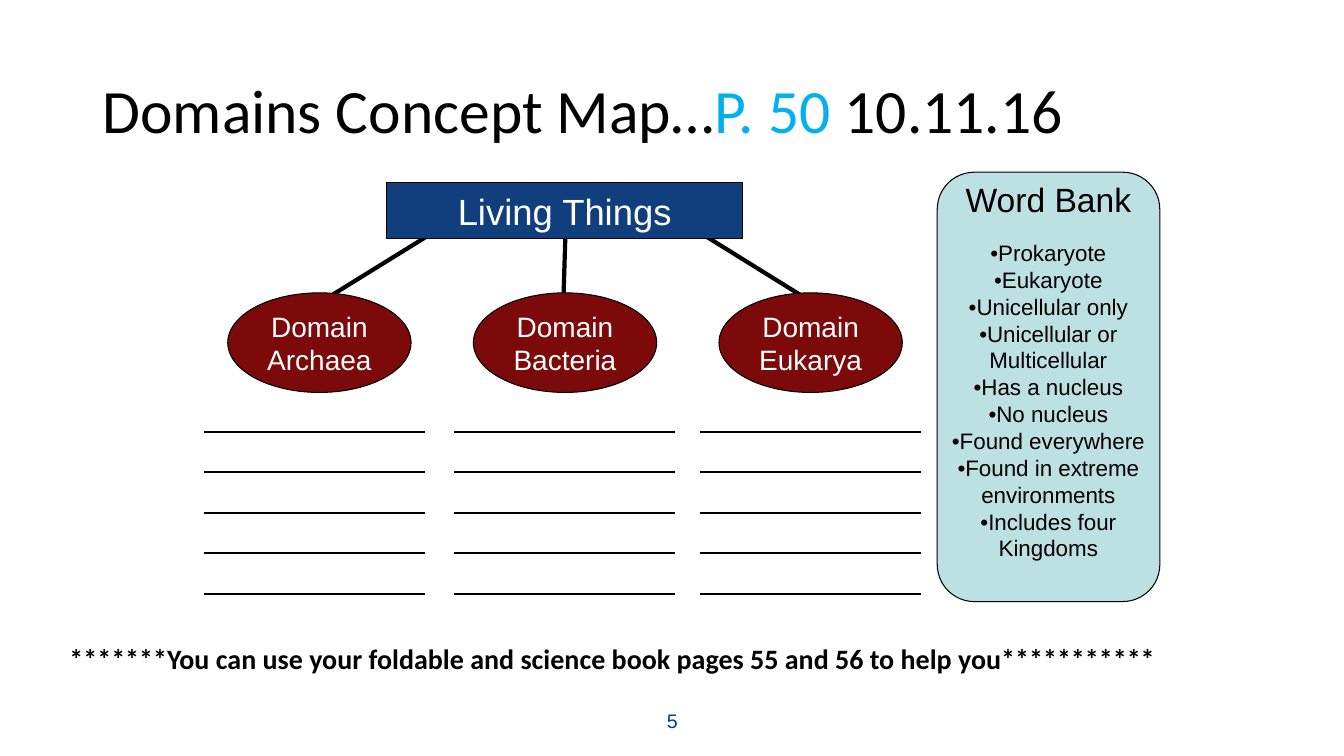
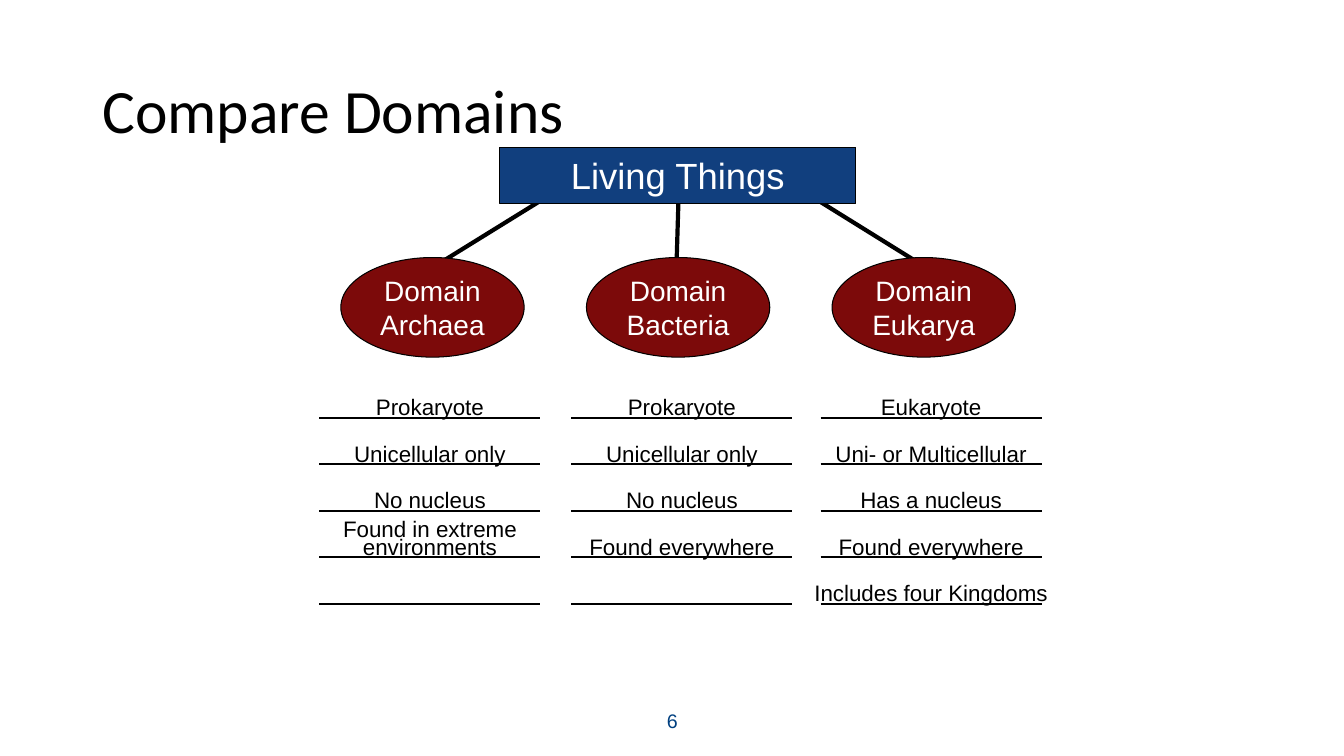
from lxml import etree
from pptx import Presentation
from pptx.dml.color import RGBColor
from pptx.enum.shapes import MSO_CONNECTOR, MSO_SHAPE
from pptx.enum.text import MSO_ANCHOR, PP_ALIGN
from pptx.oxml.ns import qn
from pptx.util import Cm, Pt

STRAIGHT = MSO_CONNECTOR.STRAIGHT
RECTANGLE, OVAL, ROUNDED = MSO_SHAPE.RECTANGLE, MSO_SHAPE.OVAL, MSO_SHAPE.ROUNDED_RECTANGLE
TOP, MIDDLE, BOTTOM = MSO_ANCHOR.TOP, MSO_ANCHOR.MIDDLE, MSO_ANCHOR.BOTTOM
LEFT, CENTER = PP_ALIGN.LEFT, PP_ALIGN.CENTER

color = RGBColor.from_string
BLACK, WHITE, NAVY, MAROON = "000000", "FFFFFF", "113F7E", "7C0A0A"
PALE_TEAL, SKY_BLUE, NUMBER_BLUE = "BDE0E3", "00B0F0", "004080"

# Lengths in centimetres
RULE_WIDTH = 5.57
RULE_COUNT = 5
ANSWER_WIDTH, ANSWER_HEIGHT = 6.05, 1.22
DOMAINS = ["Archaea", "Bacteria", "Eukarya"]
BRANCHES = [(1.02, 1.35, -1.68, 3.02), (8.03, 1.35, 10.72, 3.02), (4.5, 1.27, 4.45, 2.92)]

SLIDES = [
    {
        "title": [("Domains Concept Map…", BLACK), ("P. 50 ", SKY_BLUE), ("10.11.16", BLACK)],
        "number": "5",
        "map": (9.75, 4.6),
        "columns": [5.15, 11.44, 17.63],
        "first_rule": 10.88,
        "rule_step": 1.02,
    },
    {
        "title": [("Compare Domains", BLACK)],
        "number": "6",
        "map": (12.6, 3.71),
        "columns": [8.05, 14.4, 20.68],
        "first_rule": 10.53,
        "rule_step": 1.17,
    },
]

WORD_BANK = [
    "Prokaryote", "Eukaryote", "Unicellular only", "Unicellular or Multicellular",
    "Has a nucleus", "No nucleus", "Found everywhere",
    "Found in extreme environments", "Includes four Kingdoms",
]

TWO_LINE_ANSWER = "Found in extreme environments"
ANSWERS = [
    ["Prokaryote", "Unicellular only", "No nucleus", TWO_LINE_ANSWER],
    ["Prokaryote", "Unicellular only", "No nucleus", "Found everywhere"],
    ["Eukaryote", "Uni- or Multicellular", "Has a nucleus", "Found everywhere",
     "Includes four Kingdoms"],
]


def write_text(shape, text, size, font_color, anchor=MIDDLE, align=CENTER, font="Arial"):
    """Fill a shape with wrapped text that has no side margins."""
    frame = shape.text_frame
    frame.word_wrap = True
    frame.margin_left = frame.margin_right = 0
    frame.vertical_anchor = anchor
    frame.text = text
    for paragraph in frame.paragraphs:
        paragraph.alignment = align
        for run in paragraph.runs:
            run.font.name = font
            run.font.size = Pt(size)
            run.font.color.rgb = color(font_color)
    return frame


def add_line(slide, x1, y1, x2, y2, weight):
    line = slide.shapes.add_connector(STRAIGHT, Cm(x1), Cm(y1), Cm(x2), Cm(y2))
    line.line.color.rgb = color(BLACK)
    line.line.width = Pt(weight)
    etree.SubElement(line._element.spPr, qn("a:effectLst"))


presentation = Presentation()
presentation.slide_width, presentation.slide_height = Cm(33.87), Cm(19.05)
title_only = presentation.slide_layouts[5]

# Title, concept map, answer rules and number on both slides
for content in SLIDES:
    slide = presentation.slides.add_slide(title_only)
    title = slide.shapes.title
    title.left, title.top, title.width, title.height = Cm(2.33), Cm(1.01), Cm(29.21), Cm(3.68)
    title.text_frame.vertical_anchor = MIDDLE
    paragraph = title.text_frame.paragraphs[0]
    paragraph.alignment = LEFT
    paragraph.line_spacing = 0.9
    for text, text_color in content["title"]:
        run = paragraph.add_run()
        run.text = text
        run.font.name = "Calibri"
        run.font.size = Pt(44)
        run.font.color.rgb = color(text_color)

    number = slide.shapes.add_textbox(Cm(11.23), Cm(17.65), Cm(11.43), Cm(1.02))
    write_text(number, content["number"], 14, NUMBER_BLUE)

    map_left, map_top = content["map"]
    for x1, y1, x2, y2 in BRANCHES:
        add_line(slide, map_left + x1, map_top + y1, map_left + x2, map_top + y2, 3)

    nodes = [(RECTANGLE, 0, 0, 8.97, 1.42, NAVY, "Living Things", 26)]
    for index, domain in enumerate(DOMAINS):
        nodes.append((OVAL, -4.01 + 6.19 * index, 2.78, 4.62, 2.51, MAROON,
                      f"Domain\n{domain}", 20))
    for preset, x, y, width, height, fill, text, size in nodes:
        node = slide.shapes.add_shape(preset, Cm(map_left + x), Cm(map_top + y),
                                      Cm(width), Cm(height))
        node.shadow.inherit = False
        node.fill.solid()
        node.fill.fore_color.rgb = color(fill)
        node.line.color.rgb = color(BLACK)
        node.line.width = Pt(0.75)
        frame = write_text(node, text, size, WHITE)
        frame.margin_top = frame.margin_bottom = 0

    for left in content["columns"]:
        for row in range(RULE_COUNT):
            y = content["first_rule"] + row * content["rule_step"]
            add_line(slide, left, y, left + RULE_WIDTH, y, 1.5)

map_slide, compare_slide = presentation.slides

# Word bank and hint
bank = map_slide.shapes.add_shape(ROUNDED, Cm(23.62), Cm(4.34), Cm(5.61), Cm(10.82))
bank.shadow.inherit = False
bank.fill.solid()
bank.fill.fore_color.rgb = color(PALE_TEAL)
bank.line.color.rgb = color(BLACK)
bank.line.width = Pt(0.75)

words = map_slide.shapes.add_textbox(Cm(23.65), Cm(4.39), Cm(5.54), Cm(10.7))
bank_text = "\n".join(["Word Bank"] + [f"•{word}" for word in WORD_BANK])
frame = write_text(words, bank_text, 16, BLACK, anchor=TOP)
frame.paragraphs[0].runs[0].font.size = Pt(24)
frame.paragraphs[1].space_before = Pt(14)

hint = map_slide.shapes.add_textbox(Cm(1.5), Cm(16.05), Cm(28.04), Cm(1.12))
frame = write_text(
    hint,
    "*******You can use your foldable and science book pages 55 and 56 to help you***********",
    20, BLACK, anchor=TOP, align=LEFT, font="Calibri")
frame.paragraphs[0].runs[0].font.bold = True
frame.margin_left = Cm(0.25)

# Answers standing on the rules
comparison = SLIDES[1]
for left, answers in zip(comparison["columns"], ANSWERS):
    for row, answer in enumerate(answers):
        y = comparison["first_rule"] + row * comparison["rule_step"]
        box = compare_slide.shapes.add_textbox(
            Cm(left - (ANSWER_WIDTH - RULE_WIDTH) / 2), Cm(y + 0.19 - ANSWER_HEIGHT),
            Cm(ANSWER_WIDTH), Cm(ANSWER_HEIGHT))
        frame = write_text(box, answer, 16, BLACK, anchor=BOTTOM)
        if answer == TWO_LINE_ANSWER:
            frame.paragraphs[0].line_spacing = 0.7

presentation.save("out.pptx")
